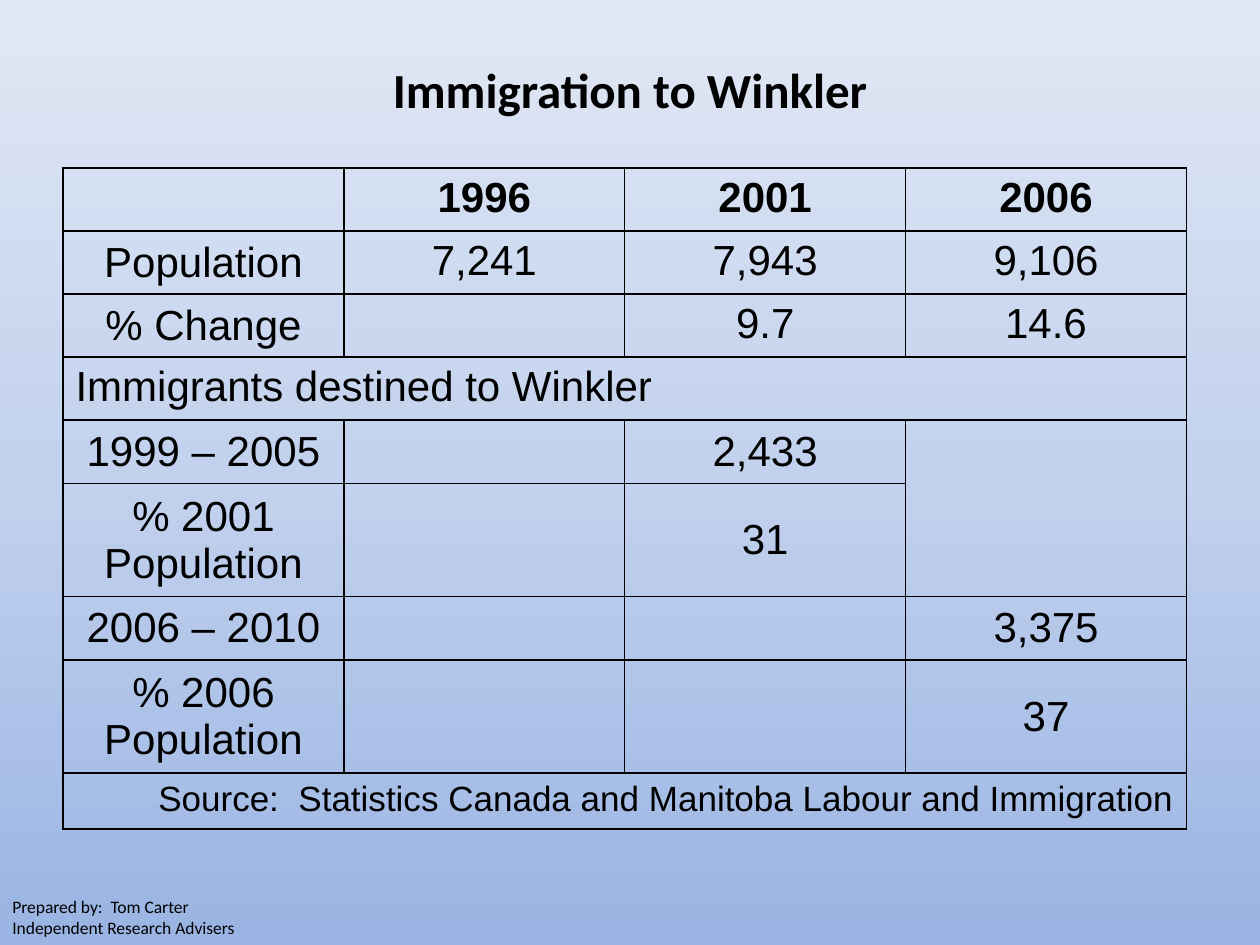
from copy import deepcopy
from lxml import etree
from pptx import Presentation
from pptx.dml.color import RGBColor
from pptx.enum.text import MSO_ANCHOR, PP_ALIGN
from pptx.oxml.ns import qn
from pptx.util import Pt

LEFT, MID, RIGHT = PP_ALIGN.LEFT, PP_ALIGN.CENTER, PP_ALIGN.RIGHT
TOP, HALF = MSO_ANCHOR.TOP, MSO_ANCHOR.MIDDLE
BLACK = RGBColor(0x00, 0x00, 0x00)
DEEP = RGBColor(0x9A, 0xB5, 0xE4)
SOFT = RGBColor(0xC2, 0xD1, 0xED)
PALE = RGBColor(0xE1, 0xE8, 0xF5)

ROWS = [
    ["", "1996", "2001", "2006"],
    ["Population", "7,241", "7,943", "9,106"],
    ["% Change", "", "9.7", "14.6"],
    ["Immigrants destined to Winkler", "", "", ""],
    ["1999 – 2005", "", "2,433", ""],
    ["% 2001 Population", "", "31", ""],
    ["2006 – 2010", "", "", "3,375"],
    ["% 2006 Population", "", "", "37"],
    ["Source:  Statistics Canada and Manitoba Labour and Immigration", "", "", ""],
]
HEAD, BAND, LAST = 0, 3, len(ROWS) - 1
TALL = (5, 7)
SPANS = [((BAND, 0), (BAND, 3)), ((4, 3), (5, 3)), ((LAST, 0), (LAST, 3))]


def add_run(para, text, font, size, bold=False):
    run = para.add_run()
    run.text = text
    run.font.name = font
    run.font.size = Pt(size)
    run.font.bold = bold
    run.font.color.rgb = BLACK


def paint_back(slide):
    fill = slide.background.fill
    fill.gradient()
    fill.gradient_angle = 90
    first = fill.gradient_stops[0]._gs
    first.addnext(deepcopy(first))
    for stop, place, color in zip(fill.gradient_stops, (0, 0.5, 1), (DEEP, SOFT, PALE)):
        stop.position = place
        stop.color.rgb = color


def add_text(slide, box, lines, size, bold=False, align=LEFT, anchor=TOP):
    frame = slide.shapes.add_textbox(*map(Pt, box)).text_frame
    frame.word_wrap = True
    frame.vertical_anchor = anchor
    for i, line in enumerate(lines):
        para = frame.add_paragraph() if i else frame.paragraphs[0]
        para.alignment = align
        add_run(para, line, "Calibri", size, bold)


def add_edges(cell):
    props = cell._tc.get_or_add_tcPr()
    for side in ("a:lnL", "a:lnR", "a:lnT", "a:lnB"):
        line = etree.SubElement(props, qn(side), w=str(Pt(1)))
        fill = etree.SubElement(line, qn("a:solidFill"))
        etree.SubElement(fill, qn("a:srgbClr"), val=str(BLACK))


def add_grid(slide, box):
    left, top, width, height = map(Pt, box)
    cols = len(ROWS[0])
    table = slide.shapes.add_table(len(ROWS), cols, left, top, width, height).table
    table.first_row = table.horz_banding = False
    for col in table.columns:
        col.width = int(width / cols)
    for r, row in enumerate(ROWS):
        table.rows[r].height = Pt(64.6 if r in TALL else 32 if r == LAST else 36)
        for c, text in enumerate(row):
            cell = table.cell(r, c)
            add_edges(cell)
            cell.fill.background()
            if not text:
                continue
            plain = r in (HEAD, BAND, LAST) or (r < BAND and c)
            cell.vertical_anchor = TOP if plain else HALF
            para = cell.text_frame.paragraphs[0]
            para.alignment = {BAND: LEFT, LAST: RIGHT}.get(r, MID)
            add_run(para, text, "Arial", 20 if r == LAST else 24, r == HEAD)
    for start, end in SPANS:
        table.cell(*start).merge(table.cell(*end))


def main():
    deck = Presentation()
    deck.slide_width, deck.slide_height = Pt(720), Pt(540)
    slide = deck.slides.add_slide(deck.slide_layouts[6])
    paint_back(slide)
    add_text(slide, (0, 30.24, 720, 41), ["Immigration to Winkler"], 28, True, MID, HALF)
    add_text(slide, (0, 508.3, 144, 31.7),
             ["Prepared by:  Tom Carter", "Independent Research Advisers"], 10)
    add_grid(slide, (36, 96, 642, 377.2))
    deck.save("out.pptx")


if __name__ == "__main__":
    main()
